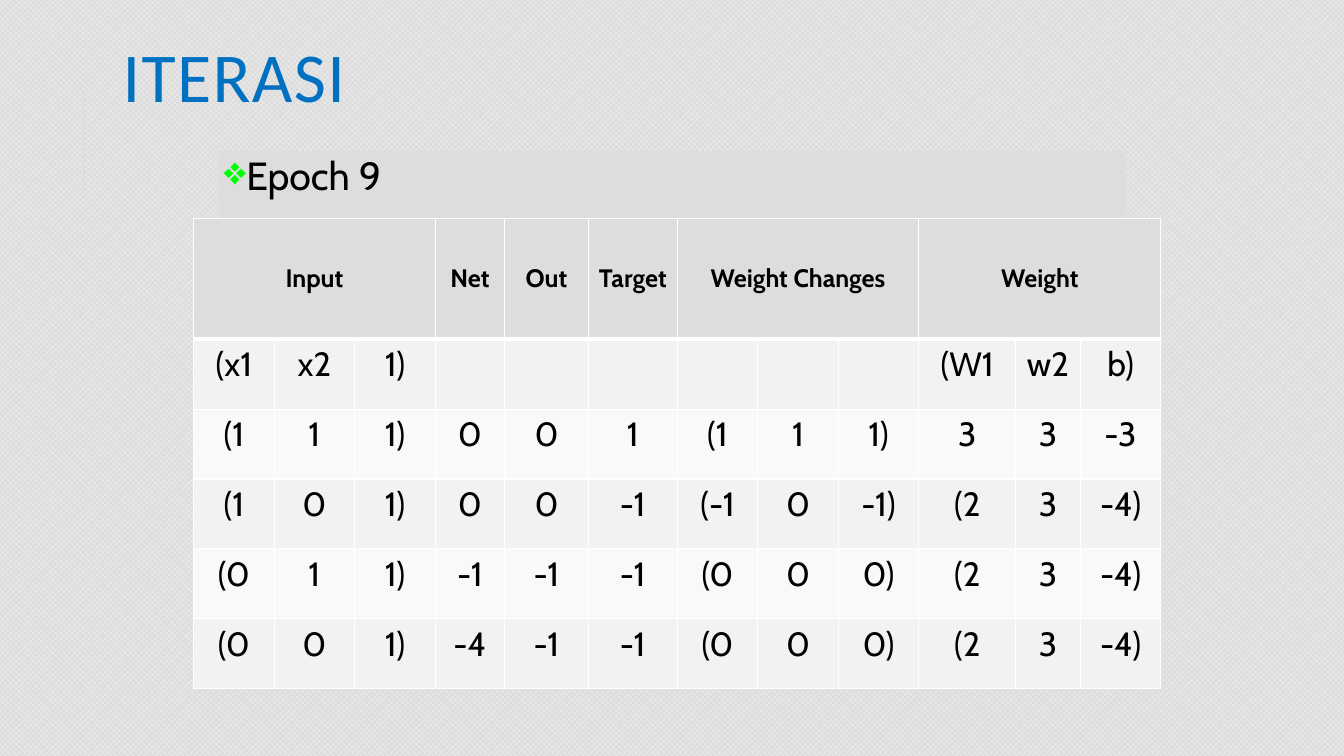
from lxml.etree import SubElement
from pptx import Presentation
from pptx.dml.color import RGBColor
from pptx.enum.dml import MSO_PATTERN
from pptx.enum.shapes import MSO_CONNECTOR, MSO_SHAPE
from pptx.enum.text import MSO_ANCHOR, PP_ALIGN
from pptx.oxml import parse_xml
from pptx.oxml.ns import nsdecls, qn
from pptx.util import Cm, Pt

COLORS = {
    "title": "0070C0",
    "text": "000000",
    "panel": "DDDDDD",
    "pattern": "F8F8F8",
    "bullet": "00FF00",
    "odd_row": "F2F2F2",
    "even_row": "F9F9F9",
    "border": "FFFFFF",
}
COLUMN_WIDTHS = [2.03] * 3 + [1.75, 2.11, 2.24] + [2.03] * 3 + [2.44, 1.63, 2.03]
ROW_HEIGHTS = [3.04] + [1.76] * 5
HEADERS = [("Input", 3), ("Net", 1), ("Out", 1), ("Target", 1), ("Weight Changes", 3), ("Weight", 3)]
ROWS = [
    ["(x1", "x2", "1)", "", "", "", "", "", "", "(W1", "w2", "b)"],
    ["(1", "1", "1)", "0", "0", "1", "(1", "1", "1)", "3", "3", "-3"],
    ["(1", "0", "1)", "0", "0", "-1", "(-1", "0", "-1)", "(2", "3", "-4)"],
    ["(0", "1", "1)", "-1", "-1", "-1", "(0", "0", "0)", "(2", "3", "-4)"],
    ["(0", "0", "1)", "-4", "-1", "-1", "(0", "0", "0)", "(2", "3", "-4)"],
]


def set_font(paragraph, name, size, color, bold=False):
    paragraph.font.name = name
    paragraph.font.size = Pt(size)
    paragraph.font.bold = bold
    paragraph.font.color.rgb = RGBColor.from_string(COLORS[color])


def style_cell(cell, fill, top, bottom):
    cell.fill.solid()
    cell.fill.fore_color.rgb = RGBColor.from_string(COLORS[fill])
    properties = cell._tc.get_or_add_tcPr()
    for index, (side, width) in enumerate([("L", 1), ("R", 1), ("T", top), ("B", bottom)]):
        properties.insert(index, parse_xml(
            f'<a:ln{side} {nsdecls("a")} w="{Pt(width)}"><a:solidFill>'
            f'<a:srgbClr val="{COLORS["border"]}"/></a:solidFill></a:ln{side}>'))


presentation = Presentation()
presentation.slide_width = Cm(33.87)
presentation.slide_height = Cm(19.05)
slide = presentation.slides.add_slide(presentation.slide_layouts[6])

background = slide.background.fill
background.patterned()
background.pattern = MSO_PATTERN.SOLID_DIAMOND
background.fore_color.rgb = RGBColor.from_string(COLORS["pattern"])
background.back_color.rgb = RGBColor.from_string(COLORS["panel"])

side_line = slide.shapes.add_connector(MSO_CONNECTOR.STRAIGHT, Cm(2.11), Cm(4.83), Cm(2.11), Cm(2.29))
side_line.line.color.rgb = RGBColor.from_string(COLORS["panel"])
side_line.line.width = Pt(1.5)
SubElement(side_line._element.spPr, qn("a:effectLst"))

title = slide.shapes.add_textbox(Cm(2.84), Cm(0), Cm(27), Cm(4.17))
title.text_frame.word_wrap = True
title.text_frame.vertical_anchor = MSO_ANCHOR.MIDDLE
paragraph = title.text_frame.paragraphs[0]
run = paragraph.add_run()
run.text = "ITERASI"
run._r.get_or_add_rPr().set("spc", "100")
paragraph.line_spacing = 0.8
set_font(paragraph, "Calibri", 50, "title")

panel = slide.shapes.add_shape(MSO_SHAPE.RECTANGLE, Cm(5.51), Cm(3.81), Cm(22.86), Cm(13.21))
panel.shadow.inherit = False
panel.fill.solid()
panel.fill.fore_color.rgb = RGBColor.from_string(COLORS["panel"])
panel.line.fill.background()
frame = panel.text_frame
frame.word_wrap = True
frame.vertical_anchor = MSO_ANCHOR.TOP
frame.margin_left = frame.margin_right = frame.margin_top = frame.margin_bottom = Cm(0.13)
paragraph = frame.paragraphs[0]
paragraph.text = "Epoch 9"
paragraph.alignment = PP_ALIGN.LEFT
paragraph.line_spacing = 0.9
paragraph.space_after = Pt(2)
paragraph_properties = paragraph._p.get_or_add_pPr()
paragraph_properties.set("marL", str(Cm(0.25)))
paragraph_properties.set("indent", str(-Cm(0.25)))
bullet_color = SubElement(paragraph_properties, qn("a:buClr"))
SubElement(bullet_color, qn("a:srgbClr"), val=COLORS["bullet"])
SubElement(paragraph_properties, qn("a:buChar"), char="❖")
set_font(paragraph, "Cabin", 28, "text")

table = slide.shapes.add_table(
    len(ROW_HEIGHTS), len(COLUMN_WIDTHS), Cm(4.88), Cm(5.51),
    Cm(sum(COLUMN_WIDTHS)), Cm(sum(ROW_HEIGHTS))).table
table.horz_banding = False
for column, width in zip(table.columns, COLUMN_WIDTHS):
    column.width = Cm(width)
for row, height in zip(table.rows, ROW_HEIGHTS):
    row.height = Cm(height)

header_row = []
for label, span in HEADERS:
    start = len(header_row)
    header_row += [label] + [""] * (span - 1)
    if span > 1:
        table.cell(0, start).merge(table.cell(0, start + span - 1))

for row_index, values in enumerate([header_row] + ROWS):
    is_header = row_index == 0
    fill = "panel" if is_header else "odd_row" if row_index % 2 else "even_row"
    for column_index, value in enumerate(values):
        cell = table.cell(row_index, column_index)
        style_cell(cell, fill, 3 if row_index == 1 else 1, 3 if is_header else 1)
        cell.vertical_anchor = MSO_ANCHOR.MIDDLE if is_header else MSO_ANCHOR.TOP
        paragraph = cell.text_frame.paragraphs[0]
        if value:
            paragraph.text = value
        paragraph.alignment = PP_ALIGN.CENTER
        set_font(paragraph, "Cabin", 18 if is_header else 24, "text", is_header)

presentation.save("out.pptx")
